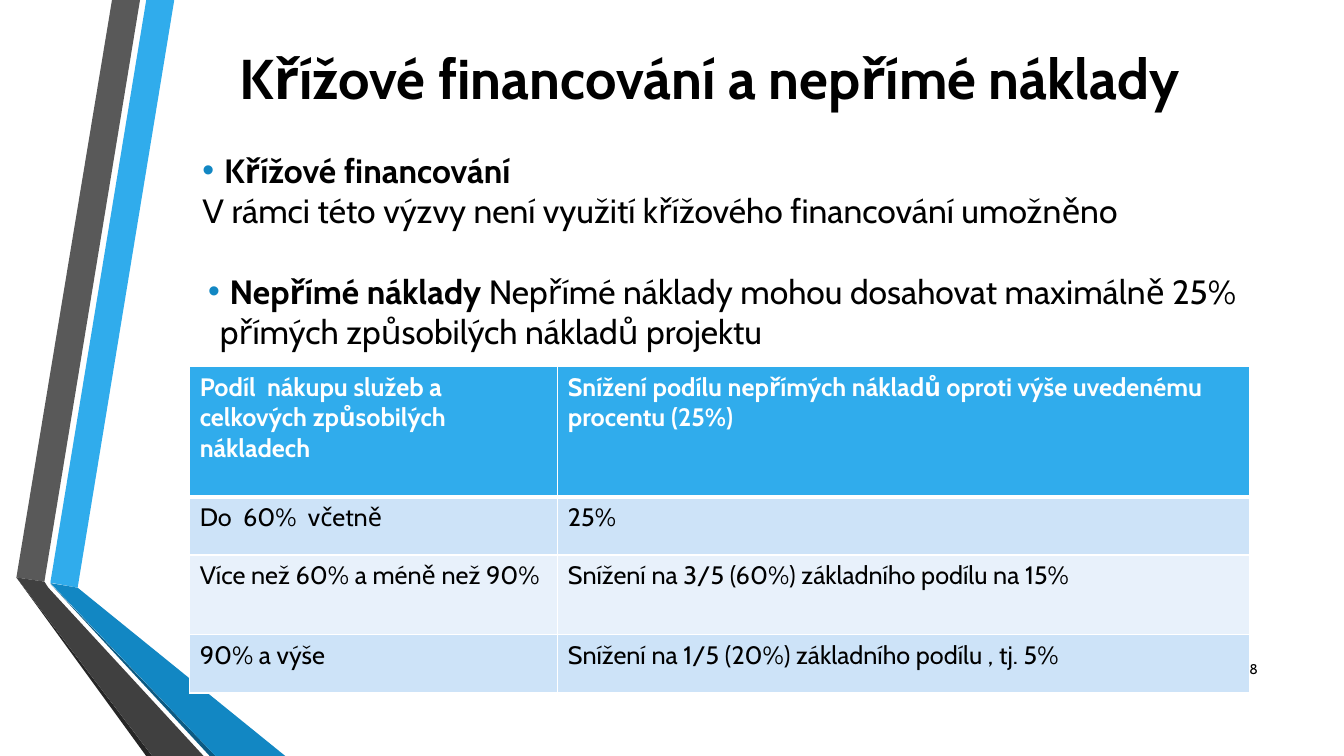
from dataclasses import dataclass
from lxml import etree
from pptx import Presentation
from pptx.dml.color import RGBColor
from pptx.enum import text as t
from pptx.oxml import ns
from pptx.util import Pt

WHITE = RGBColor(0xFF, 0xFF, 0xFF)
BLACK = RGBColor(0, 0, 0)
SKY = RGBColor(0x30, 0xAC, 0xEC)
BLUE = RGBColor(0x12, 0x87, 0xC3)
NAVY = RGBColor(0x0C, 0x5A, 0x82)
GREY = RGBColor(0x59, 0x59, 0x59)
DARK = RGBColor(0x40, 0x40, 0x40)
COAL = RGBColor(0x26, 0x26, 0x26)
PALE = RGBColor(0xCD, 0xE3, 0xF8)
MIST = RGBColor(0xE8, 0xF1, 0xFB)
FONT = "Cabin"


@dataclass
class Band:
    color: RGBColor
    points: list[tuple[float, float]]


@dataclass
class Line:
    runs: list[tuple[str, bool]]
    left: float
    hang: float = 0
    before: float = 0


BANDS = [
    Band(SKY, [(36, 416.2), (55.5, 419.8), (124.5, 0), (104.5, 0)]),
    Band(GREY, [(100, 0), (80, 0), (11.7, 412.5), (31.7, 415.5)]),
    Band(COAL, [(11.7, 412.5), (104.4, 540), (108.7, 540)]),
    Band(NAVY, [(36, 417), (149.8, 540), (154, 540)]),
    Band(BLUE, [(36, 416.5), (154, 540), (203.8, 540), (55.5, 419.8)]),
    Band(DARK, [(145.4, 540), (34.5, 419.8), (31.7, 415.5), (11.7, 412.5),
                (108.7, 540)]),
]

BODY = [
    Line([("Křížové financování", True)], 51.5, 15.5),
    Line([("V rámci této výzvy není využití křížového financování umožněno",
           False)], 36),
    Line([("Nepřímé náklady ", True),
          ("Nepřímé náklady mohou dosahovat maximálně 25%", False)],
         55.5, 15.5, 28.8),
    Line([("přímých způsobilých nákladů projektu", False)], 48.5),
]

COLS = [263, 494]
ROWS = [93, 41.5, 57, 41.5]
CELLS = [
    ("Podíl  nákupu služeb a celkových způsobilých nákladech",
     "Snížení podílu nepřímých nákladů oproti výše uvedenému procentu (25%)"),
    ("Do  60%  včetně", "25%"),
    ("Více než 60% a méně než 90%",
     "Snížení na 3/5 (60%) základního podílu na 15%"),
    ("90% a výše", "Snížení na 1/5 (20%) základního podílu , tj. 5%"),
]


def add_run(para, words: str, size: float, bold: bool = False,
            color: RGBColor = BLACK) -> None:
    run = para.add_run()
    run.text = words
    run.font.name = FONT
    run.font.size = Pt(size)
    run.font.bold = bold
    run.font.color.rgb = color


def add_band(slide, band: Band) -> None:
    pts = [(Pt(x), Pt(y)) for x, y in band.points]
    pen = slide.shapes.build_freeform(*pts[0], scale=1.0)
    pen.add_line_segments(pts[1:], close=True)
    shape = pen.convert_to_shape()
    shape.shadow.inherit = False
    shape.fill.solid()
    shape.fill.fore_color.rgb = band.color
    shape.line.fill.background()


def add_box(slide, left: float, top: float, width: float, height: float):
    frame = slide.shapes.add_textbox(
        Pt(left), Pt(top), Pt(width), Pt(height)).text_frame
    frame.word_wrap = True
    return frame


def indent(para, line: Line) -> None:
    props = para._p.get_or_add_pPr()
    props.set("marL", str(Pt(line.left)))
    props.set("indent", str(-Pt(line.hang)))
    if line.hang:
        tint = etree.SubElement(props, ns.qn("a:buClr"))
        etree.SubElement(tint, ns.qn("a:srgbClr"), val=str(BLUE))
        etree.SubElement(props, ns.qn("a:buFont"), typeface="Arial")
        etree.SubElement(props, ns.qn("a:buChar"), char="•")


def add_edges(cell, top: float, bottom: float) -> None:
    props = cell._tc.get_or_add_tcPr()
    sides = [("L", 1), ("R", 1), ("T", top), ("B", bottom)]
    for i, (side, width) in enumerate(sides):
        edge = etree.Element(ns.qn(f"a:ln{side}"), w=str(Pt(width)))
        fill = etree.SubElement(edge, ns.qn("a:solidFill"))
        etree.SubElement(fill, ns.qn("a:srgbClr"), val=str(WHITE))
        props.insert(i, edge)


def add_grid(slide) -> None:
    grid = slide.shapes.add_table(
        len(ROWS), len(COLS), Pt(135.5), Pt(262),
        Pt(sum(COLS)), Pt(sum(ROWS))).table
    for col, width in zip(grid.columns, COLS):
        col.width = Pt(width)
    for r, (height, words) in enumerate(zip(ROWS, CELLS)):
        grid.rows[r].height = Pt(height)
        head = r == 0
        for c, word in enumerate(words):
            cell = grid.cell(r, c)
            cell.fill.solid()
            cell.fill.fore_color.rgb = SKY if head else PALE if r % 2 else MIST
            add_run(cell.text_frame.paragraphs[0], word, 18, head,
                    WHITE if head else BLACK)
            add_edges(cell, 3 if r == 1 else 1, 3 if head else 1)


def main() -> None:
    deck = Presentation()
    deck.slide_width, deck.slide_height = Pt(960), Pt(540)
    slide = deck.slides.add_slide(deck.slide_layouts[5])

    # Bands on the left
    for band in BANDS:
        add_band(slide, band)

    # Title
    title = slide.shapes.title
    title.left, title.top = Pt(150), Pt(27.5)
    title.width, title.height = Pt(713.5), Pt(55.5)
    frame = title.text_frame
    frame.auto_size = t.MSO_AUTO_SIZE.NONE
    frame.vertical_anchor = t.MSO_ANCHOR.MIDDLE
    frame.paragraphs[0].alignment = t.PP_ALIGN.CENTER
    add_run(frame.paragraphs[0], "Křížové financování a nepřímé náklady",
            40, True)

    # Body
    frame = add_box(slide, 101.5, 103.5, 810.5, 211)
    for i, line in enumerate(BODY):
        para = frame.add_paragraph() if i else frame.paragraphs[0]
        para.space_before = Pt(line.before)
        indent(para, line)
        for words, bold in line.runs:
            add_run(para, words, 24, bold)

    # Page number
    frame = add_box(slide, 862.5, 463, 43, 29)
    frame.vertical_anchor = t.MSO_ANCHOR.MIDDLE
    frame.paragraphs[0].alignment = t.PP_ALIGN.RIGHT
    add_run(frame.paragraphs[0], "8", 10)

    # Table
    add_grid(slide)
    deck.save("out.pptx")


if __name__ == "__main__":
    main()
